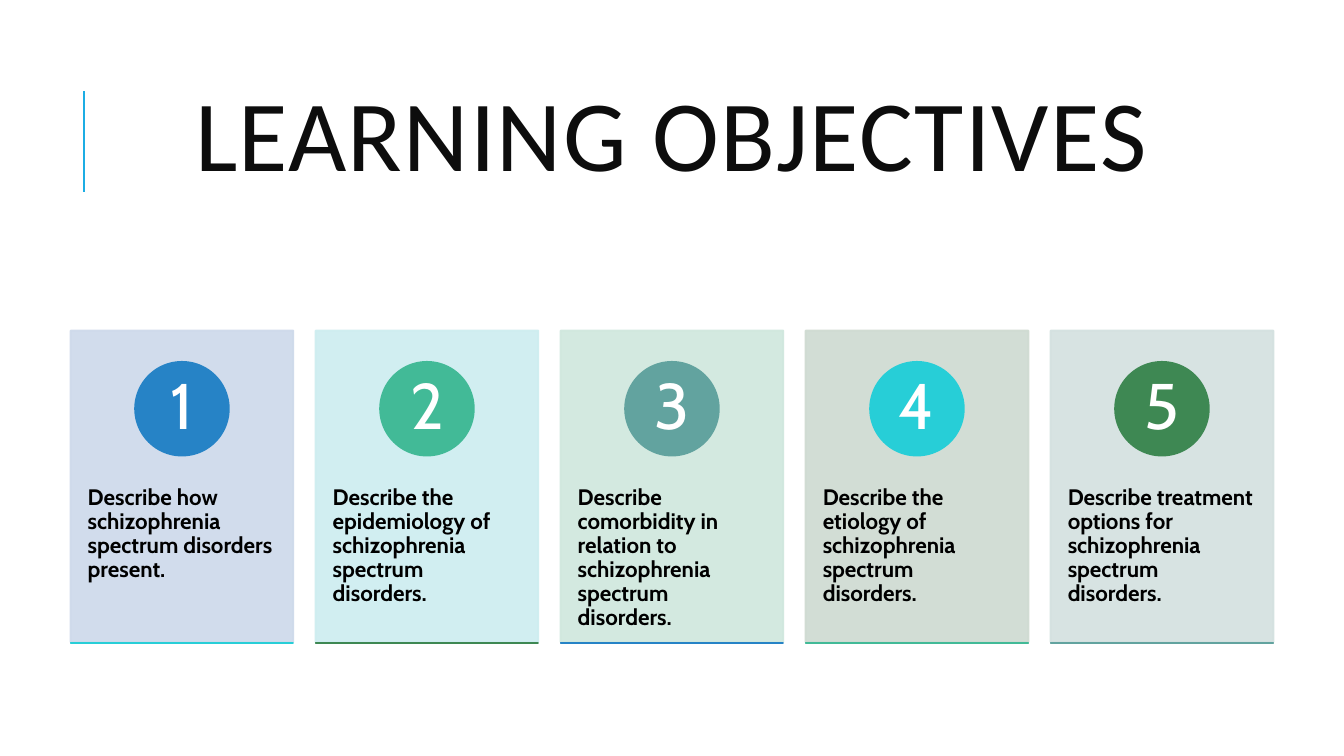
"""Build the learning objectives slide with five numbered cards."""
from lxml import etree
from pptx import Presentation
from pptx import util as u
from pptx.dml.color import RGBColor
from pptx.enum import shapes, text
from pptx.oxml.ns import qn

WHITE = RGBColor(0xFF, 0xFF, 0xFF)
BLACK = RGBColor(0, 0, 0)
TITLE_INK = RGBColor(0x0D, 0x0D, 0x0D)
RULE_BLUE = RGBColor(0x1C, 0xAD, 0xE4)
ACCENTS = [RGBColor.from_string(code) for code in
           ("2683C6", "42BA97", "62A39F", "27CED7", "3E8853")]
TINTS = [RGBColor.from_string(code) for code in
         ("CDD9EA", "CDEDF0", "CFE7DD", "CEDAD1", "D3E0DF")]
OBJECTIVES = [
    "Describe how schizophrenia spectrum disorders present.",
    "Describe the epidemiology of schizophrenia spectrum disorders.",
    "Describe comorbidity in relation to schizophrenia spectrum disorders.",
    "Describe the etiology of schizophrenia spectrum disorders.",
    "Describe treatment options for schizophrenia spectrum disorders.",
]

LEFT, PITCH = 0.7, 2.43
CARD_WIDTH, CARD_TOP, CARD_HEIGHT = 2.21, 3.28, 3.09
CIRCLE, CIRCLE_TOP = 0.93, 3.59
NUMBER = 0.66

deck = Presentation()
deck.slide_width, deck.slide_height = u.Inches(13.33), u.Inches(7.5)
page = deck.slides.add_slide(deck.slide_layouts[6])


def add_text(words, area, size, font, color, bold=False, tracking=0,
             align=text.PP_ALIGN.CENTER, anchor=text.MSO_ANCHOR.MIDDLE,
             insets=(0.1, 0.05), spacing=0.9, after=0):
    box = page.shapes.add_textbox(*map(u.Inches, area))
    frame = box.text_frame
    frame.word_wrap = True
    frame.vertical_anchor = anchor
    frame.margin_left = frame.margin_right = u.Inches(insets[0])
    frame.margin_top = frame.margin_bottom = u.Inches(insets[1])
    para = frame.paragraphs[0]
    para.alignment, para.line_spacing = align, spacing
    para.space_after = u.Pt(after)
    span = para.add_run()
    span.text = words
    span.font.name, span.font.size, span.font.bold = font, u.Pt(size), bold
    span.font.color.rgb = color
    if tracking:
        span.font._element.set("spc", str(tracking * 100))


def add_block(kind, area, color, opacity=100):
    block = page.shapes.add_shape(kind, *map(u.Inches, area))
    block.shadow.inherit = False
    block.fill.solid()
    block.fill.fore_color.rgb = color
    block.line.color.rgb = color
    block.line.width = u.Pt(1.25)
    if opacity < 100:
        for tone in block._element.spPr.iter(qn("a:srgbClr")):
            etree.SubElement(tone, qn("a:alpha"), val=str(opacity * 1000))


rule = page.shapes.add_connector(
    shapes.MSO_CONNECTOR.STRAIGHT,
    u.Inches(0.83), u.Inches(1.9), u.Inches(0.83), u.Inches(0.9))
rule.line.color.rgb = RULE_BLUE
rule.line.width = u.Pt(1.5)
etree.SubElement(rule._element.spPr, qn("a:effectLst"))

add_text("LEARNING OBJECTIVES", (0.69, 0.69, 11.94, 1.44), 72, "Calibri",
         TITLE_INK, tracking=1, spacing=0.8)

for index, objective in enumerate(OBJECTIVES):
    left = LEFT + index * PITCH
    center = left + CARD_WIDTH / 2
    add_block(shapes.MSO_SHAPE.RECTANGLE,
              (left, CARD_TOP, CARD_WIDTH, CARD_HEIGHT), TINTS[index], opacity=90)
    add_text(objective, (left, 4.46, CARD_WIDTH, 1.86), 16, "Cabin", BLACK,
             bold=True, align=text.PP_ALIGN.LEFT, anchor=text.MSO_ANCHOR.TOP,
             insets=(0.17, 0.36), after=5.6)
    add_block(shapes.MSO_SHAPE.OVAL,
              (center - CIRCLE / 2, CIRCLE_TOP, CIRCLE, CIRCLE), ACCENTS[index])
    add_text(str(index + 1),
             (center - NUMBER / 2, CIRCLE_TOP + (CIRCLE - NUMBER) / 2, NUMBER, NUMBER),
             46, "Cabin", WHITE, insets=(0.07, 0.01), after=16.1)
    add_block(shapes.MSO_SHAPE.RECTANGLE,
              (left, CARD_TOP + CARD_HEIGHT + 0.01, CARD_WIDTH, 0),
              ACCENTS[(index + 3) % len(ACCENTS)])

deck.save("out.pptx")
